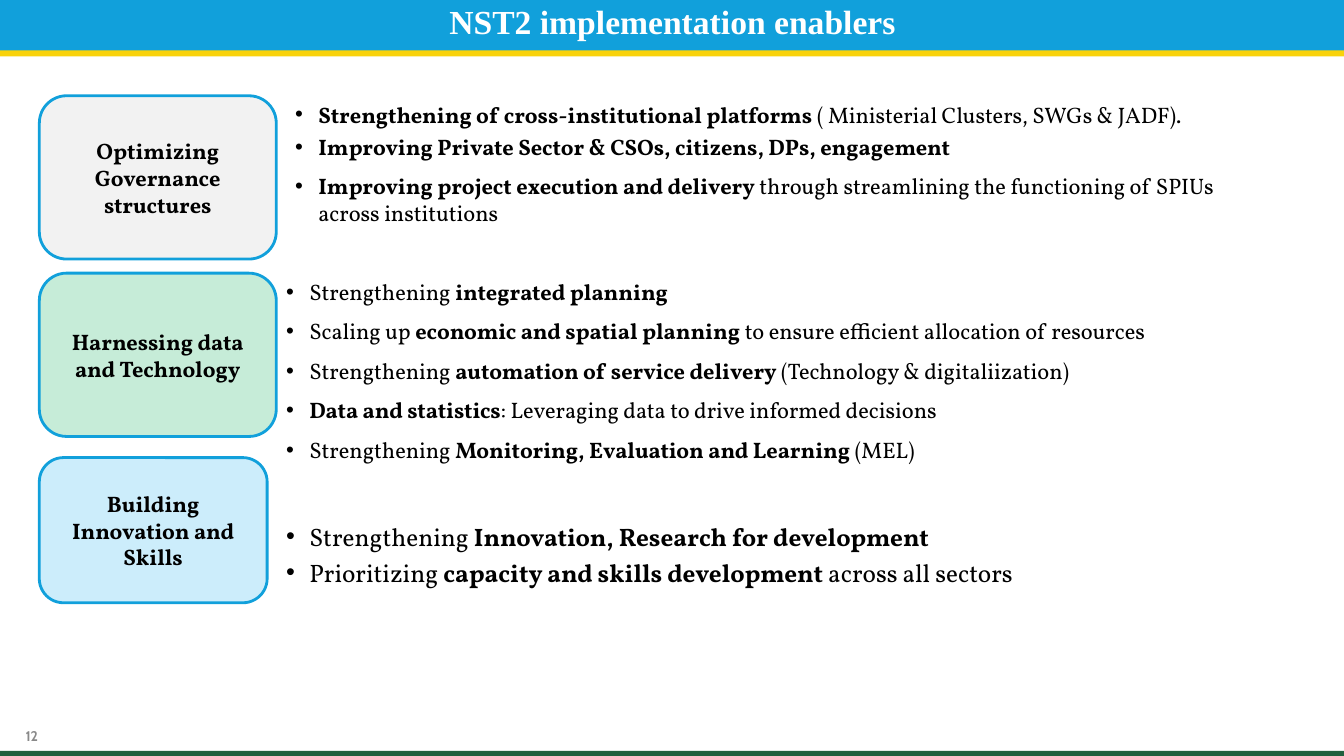
import pptx
import pptx.util
import pptx.dml.color
import pptx.enum.shapes
import pptx.enum.text
import pptx.oxml
import pptx.oxml.ns

RGBColor = pptx.dml.color.RGBColor
Shapes = pptx.enum.shapes.MSO_SHAPE
Anchor = pptx.enum.text.MSO_ANCHOR
Align = pptx.enum.text.PP_ALIGN

BLUE = RGBColor(0x11, 0xA0, 0xDB)
YELLOW = RGBColor(0xF9, 0xD2, 0x0A)
GREEN = RGBColor(0x20, 0x60, 0x3E)
PALE_GREY = RGBColor(0xF2, 0xF2, 0xF2)
PALE_GREEN = RGBColor(0xC6, 0xEC, 0xD8)
PALE_BLUE = RGBColor(0xCC, 0xED, 0xFB)
GREY = RGBColor(0x89, 0x89, 0x89)
BLACK = RGBColor(0, 0, 0)
WHITE = RGBColor(0xFF, 0xFF, 0xFF)

EMU_PER_PX = 9144  # 100 px to the inch
WIDTH, HEIGHT = 1333, 750


def px(*lengths):
    return [pptx.util.Emu(length * EMU_PER_PX) for length in lengths]


class EnablerSlide:
    """Holds the body style and the slide being drawn."""

    body_font = "Vollkorn"
    hanging = px(23)[0]

    def __init__(self, deck):
        self.slide = deck.slides.add_slide(deck.slide_layouts[6])

    def add_text(self, paragraph, text, size, font, color, bold):
        run = paragraph.add_run()
        run.text = text
        run.font.size = pptx.util.Pt(size)
        run.font.name = font
        run.font.color.rgb = color
        run.font.bold = bold

    def band(self, top, height, color):
        band = self.slide.shapes.add_shape(
            Shapes.RECTANGLE, *px(0, top, WIDTH, height))
        band.shadow.inherit = False
        band.fill.solid()
        band.fill.fore_color.rgb = color
        band.line.fill.background()

    def label(self, at, text, size, font, color, wrap=True):
        frame = self.slide.shapes.add_textbox(*px(*at)).text_frame
        frame.word_wrap = wrap
        frame.margin_left = frame.margin_right = 0
        frame.margin_top = frame.margin_bottom = 0
        line = frame.paragraphs[0]
        line.alignment = Align.CENTER
        self.add_text(line, text, size, font, color, True)
        return line

    def card(self, at, text, fill):
        card = self.slide.shapes.add_shape(Shapes.ROUNDED_RECTANGLE, *px(*at))
        card.shadow.inherit = False
        card.fill.solid()
        card.fill.fore_color.rgb = fill
        card.line.color.rgb = BLUE
        card.line.width = pptx.util.Pt(2)
        frame = card.text_frame
        frame.word_wrap = True
        frame.vertical_anchor = Anchor.MIDDLE
        frame.paragraphs[0].alignment = Align.CENTER
        self.add_text(frame.paragraphs[0], text, 16, self.body_font, BLACK,
                      True)

    def bullets(self, at, items, size=16, gap=0):
        """Text between asterisks is bold."""
        frame = self.slide.shapes.add_textbox(*px(*at)).text_frame
        frame.word_wrap = True
        for index, item in enumerate(items):
            point = frame.add_paragraph() if index else frame.paragraphs[0]
            self.add_bullet(point)
            if index:
                point.space_before = pptx.util.Pt(gap)
            for part, text in enumerate(item.split("*")):
                if text:
                    self.add_text(point, text, size, self.body_font, BLACK,
                                  part % 2 == 1)

    def add_bullet(self, paragraph):
        properties = paragraph._p.get_or_add_pPr()
        properties.set("marL", str(self.hanging))
        properties.set("indent", str(-self.hanging))
        namespace = pptx.oxml.ns.nsdecls("a")
        for element in (
            f'<a:buClr {namespace}><a:srgbClr val="{BLACK}"/></a:buClr>',
            f'<a:buFont {namespace} typeface="Arial"/>',
            f'<a:buChar {namespace} char="•"/>',
        ):
            properties.append(pptx.oxml.parse_xml(element))


def main():
    deck = pptx.Presentation()
    deck.slide_width, deck.slide_height = px(WIDTH, HEIGHT)
    enablers = EnablerSlide(deck)

    # Header, footer and page number
    enablers.band(6, 50, YELLOW)
    enablers.band(0, 50, BLUE)
    enablers.band(745, 5, GREEN)
    enablers.label((24, 722, 15, 15), "12", 10, "Cabin", GREY, wrap=False)
    title = enablers.label((242, 5, 850, 64), "NST2 implementation enablers",
                           24, "Times New Roman", WHITE)
    title.line_spacing = 0.9

    # Governance
    enablers.card((39, 95, 235, 162), "Optimizing Governance structures",
                  PALE_GREY)
    enablers.bullets((283, 95, 960, 71), [
        "*Strengthening of cross-institutional platforms *"
        "( Ministerial Clusters, SWGs & JADF).",
        "*Improving Private Sector & CSOs, citizens, DPs, engagement*",
    ], gap=4)
    enablers.bullets((283, 166, 984, 100), [
        "*Improving project execution and delivery *through streamlining "
        "the functioning of SPIUs across institutions",
    ])

    # Data and technology
    enablers.card((39, 271, 235, 162), "Harnessing data and Technology",
                  PALE_GREEN)
    enablers.bullets((274, 271, 960, 195), [
        "Strengthening *integrated planning*",
        "Scaling up *economic and spatial planning *"
        "to ensure efficient allocation of resources",
        "Strengthening *automation of service delivery *"
        "(Technology & digitaliization)",
        "*Data and statistics*: Leveraging data to drive informed decisions",
        "Strengthening *Monitoring, Evaluation and Learning *(MEL)",
    ], gap=9)

    # Innovation and skills
    enablers.card((39, 454, 226, 144), "Building Innovation and Skills",
                  PALE_BLUE)
    enablers.bullets((274, 512, 896, 112), [
        "Strengthening *Innovation, Research for development*",
        "Prioritizing *capacity and skills development *across all sectors",
    ], size=18, gap=4)

    deck.save("out.pptx")


if __name__ == "__main__":
    main()
